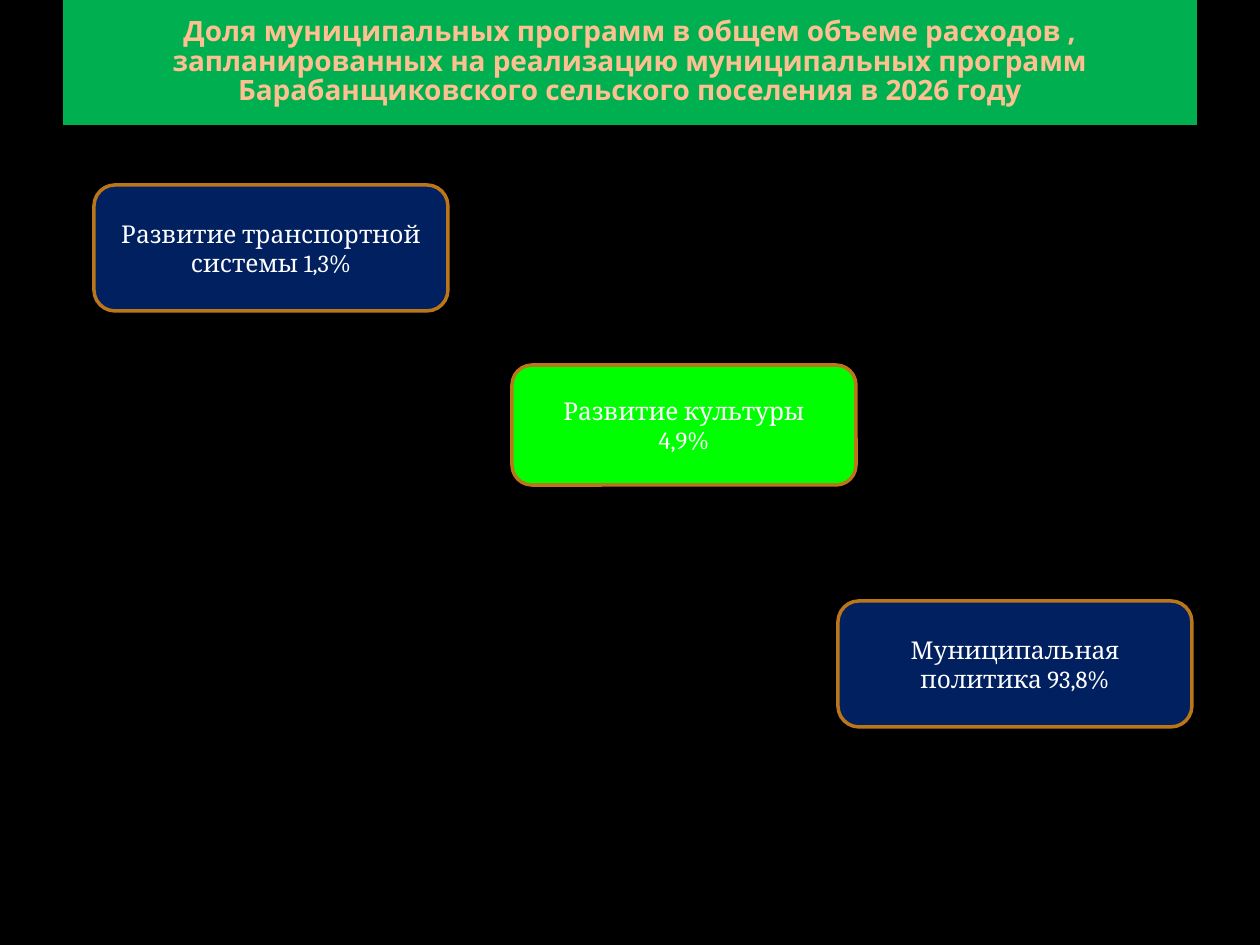
from pptx import Presentation
from pptx import util as u
from pptx.dml.color import RGBColor
from pptx.enum import shapes, text

PX = u.Inches(1) / 126
COLORS = {
    "background": "000000",
    "banner": "00B050",
    "title": "FFC091",
    "navy": "002060",
    "green": "00FF00",
    "border": "BB761A",
    "label": "FFFFFF",
}
TITLE = (
    "Доля муниципальных программ в общем объеме расходов , "
    "запланированных на реализацию муниципальных программ "
    "Барабанщиковского сельского поселения в 2026 году"
)
# Each program: left, top, width, height in px, fill, paragraphs
PROGRAMS = [
    (512, 365, 344, 120, "green", ["Развитие культуры", "4,9%"]),
    (94, 185, 354, 126, "navy", ["Развитие транспортной системы 1,3%"]),
    (838, 601, 354, 126, "navy", ["Муниципальная политика 93,8%"]),
]


def px(length):
    return u.Emu(round(length * PX))


def paint(fill, color):
    fill.solid()
    fill.fore_color.rgb = RGBColor.from_string(COLORS[color])


def write(shape, lines, font_name, size, color, bold=False):
    frame = shape.text_frame
    frame.text = "\n".join(lines)
    frame.word_wrap = True
    frame.auto_size = text.MSO_AUTO_SIZE.NONE
    frame.vertical_anchor = text.MSO_ANCHOR.MIDDLE
    for paragraph in frame.paragraphs:
        paragraph.alignment = text.PP_ALIGN.CENTER
        paragraph.font.name = font_name
        paragraph.font.size = u.Pt(size)
        paragraph.font.bold = bold
        paragraph.font.color.rgb = RGBColor.from_string(COLORS[color])


def add_title(slide):
    title = slide.shapes.title
    title.left, title.top, title.width, title.height = map(px, (63, 0, 1134, 125))
    paint(title.fill, "banner")
    write(title, [TITLE], "Open Sans", 16, "title", bold=True)
    title.text_frame.paragraphs[0].line_spacing = 0.88


def add_program(slide, left, top, width, height, fill, lines):
    box = slide.shapes.add_shape(
        shapes.MSO_SHAPE.ROUNDED_RECTANGLE, *map(px, (left, top, width, height))
    )
    box.shadow.inherit = False
    paint(box.fill, fill)
    paint(box.line.fill, "border")
    box.line.width = u.Pt(2)
    write(box, lines, "Cambria", 14, "label")


def main():
    presentation = Presentation()
    presentation.slide_width, presentation.slide_height = px(1260), px(945)
    slide = presentation.slides.add_slide(presentation.slide_layouts[5])
    paint(slide.background.fill, "background")

    # Title banner
    add_title(slide)

    # Program shares
    for program in PROGRAMS:
        add_program(slide, *program)

    presentation.save("out.pptx")


if __name__ == "__main__":
    main()
